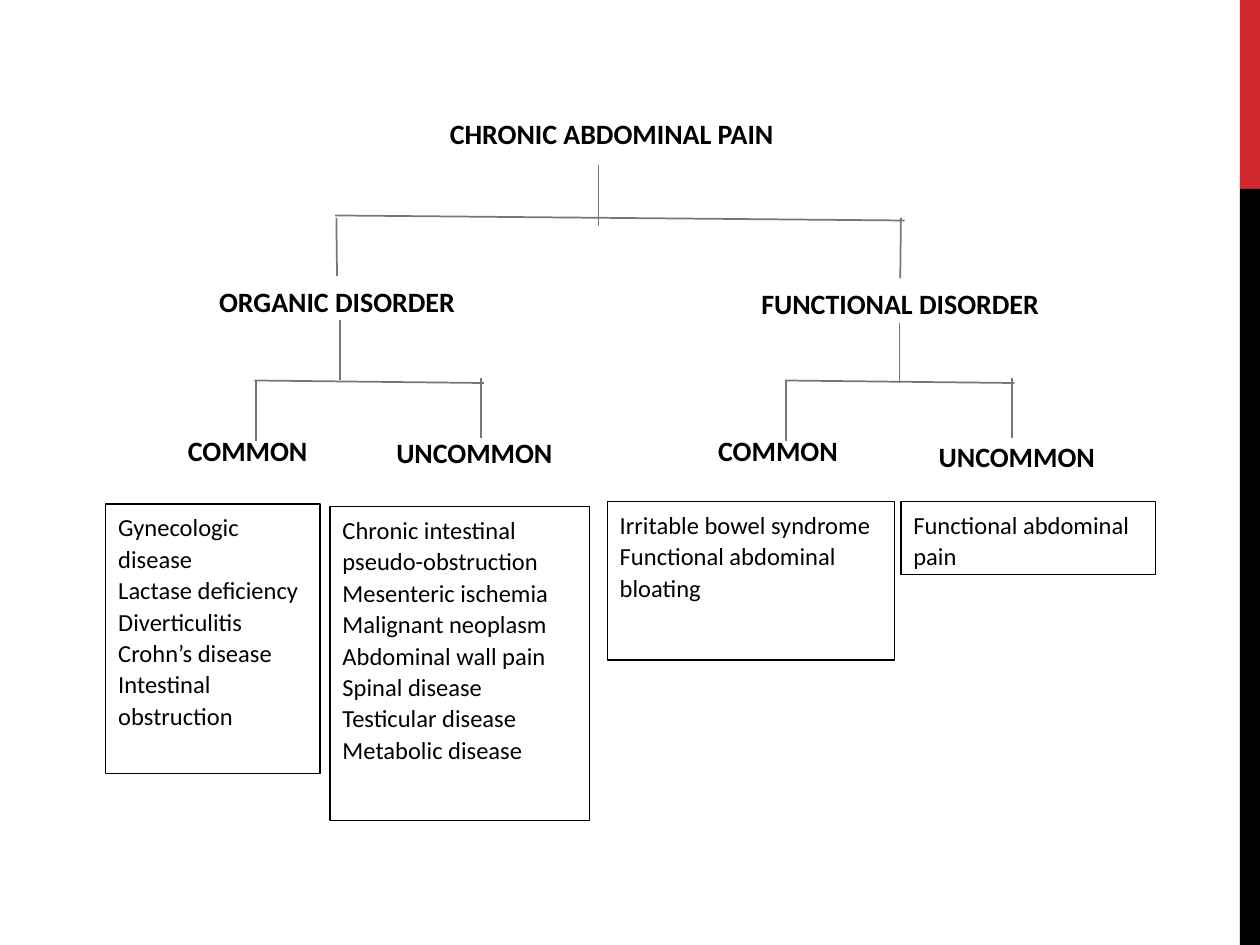
from pptx import Presentation
from pptx.dml.color import RGBColor
from pptx.enum.shapes import MSO_CONNECTOR as Link, MSO_SHAPE as Form
from pptx.enum.text import MSO_ANCHOR as Anchor, MSO_AUTO_SIZE as Fit, PP_ALIGN as Align
from pptx.util import Inches, Pt
from lxml import etree

COLS, ROWS = 100, 75
CELL = Inches(0.1)
DROP = 4.8
DRAWING = "http://schemas.openxmlformats.org/drawingml/2006/main"

HEADS = [
    ("ORGANIC DISORDER", 12.9, 21.9, 27.7),
    ("UNCOMMON", 29.8, 33.9, 15.7),
    ("COMMON", 12.9, 33.7, 13.5),
    ("FUNCTIONAL DISORDER", 57.6, 22.1, 27.7),
    ("UNCOMMON", 72.9, 34.2, 15.6),
    ("COMMON", 54.6, 33.7, 14.3),
]
LISTS = [
    ((8.4, 40, 17, 21.4),
     ["Gynecologic disease", "Lactase deficiency", "Diverticulitis",
      "Crohn’s disease", "Intestinal obstruction"]),
    ((26.2, 40.2, 20.6, 24.9),
     ["Chronic intestinal pseudo-obstruction", "Mesenteric ischemia",
      "Malignant neoplasm", "Abdominal wall pain", "Spinal disease",
      "Testicular disease", "Metabolic disease"]),
    ((48.2, 39.8, 22.8, 12.6),
     ["Irritable bowel syndrome", "Functional abdominal bloating"]),
    ((71.5, 39.8, 20.2, 5.8), ["Functional abdominal pain"]),
]


def color(code):
    return RGBColor.from_string(code)


def grid(*cells):
    return [round(n * CELL) for n in cells]


def block(slide, area, fill, edge=None):
    """Add a flat rectangle, with a thin outline if edge is given."""
    shape = slide.shapes.add_shape(Form.RECTANGLE, *grid(*area))
    shape.shadow.inherit = False
    shape.fill.solid()
    shape.fill.fore_color.rgb = color(fill)
    if edge:
        shape.line.color.rgb = color(edge)
        shape.line.width = Pt(0.75)
    else:
        shape.line.fill.background()
    return shape


def write(shape, text, size, bold=False, align=Align.LEFT):
    frame = shape.text_frame
    frame.word_wrap = True
    frame.vertical_anchor = Anchor.TOP
    para = frame.paragraphs[0]
    para.text = text
    para.alignment = align
    para.line_spacing = 1.07
    para.space_after = Pt(8)
    font = para.font
    font.name, font.size, font.bold = "Calibri", Pt(size), bold
    font.color.rgb = color("000000")


def label(shape, text):
    write(shape, text, 16, True, Align.CENTER)
    shape.text_frame.auto_size = Fit.SHAPE_TO_FIT_TEXT
    return shape


def line(slide, *ends):
    link = slide.shapes.add_connector(Link.STRAIGHT, *grid(*ends))
    link.line.color.rgb = color("777777")
    link.line.width = Pt(1)
    etree.SubElement(link.element.spPr, f"{{{DRAWING}}}effectLst")
    return link


def drop(slide, x, y):
    return line(slide, x, y, x, y + DROP)


def fork(slide, left, stem, top):
    """Draw a stem, its rail and the two drops below it."""
    drop(slide, stem, top)
    line(slide, left, 30.2, left + 18.2, 30.4)
    drop(slide, left + 0.1, 30.2)
    drop(slide, left + 18, 30)


def main():
    deck = Presentation()
    deck.slide_width, deck.slide_height = grid(COLS, ROWS)
    slide = deck.slides.add_slide(deck.slide_layouts[6])

    block(slide, (98.4, 0, 1.6, 15), "D1282E")
    block(slide, (98.4, 15, 1.6, 60), "000000")

    line(slide, 26.6, 17.1, 71.8, 17.5)
    title = slide.shapes.add_textbox(*grid(34.7, 8.6, 27.7, 7.7))
    label(title, "CHRONIC ABDOMINAL PAIN")
    heads = [label(block(slide, (x, y, wide, 4.4), "FFFFFF"), text)
             for text, x, y, wide in HEADS]

    drop(slide, 47.5, 13.1)
    for x, head in ((26.7, heads[0]), (71.5, heads[3])):
        drop(slide, x, 17.3).end_connect(head, 0)
    fork(slide, 20.2, 27, 25.4)
    fork(slide, 62.3, 71.4, 25.6)

    for area, items in LISTS:
        write(block(slide, area, "FFFFFF", "000000"), "\n".join(items), 14)

    deck.save("out.pptx")


if __name__ == "__main__":
    main()
